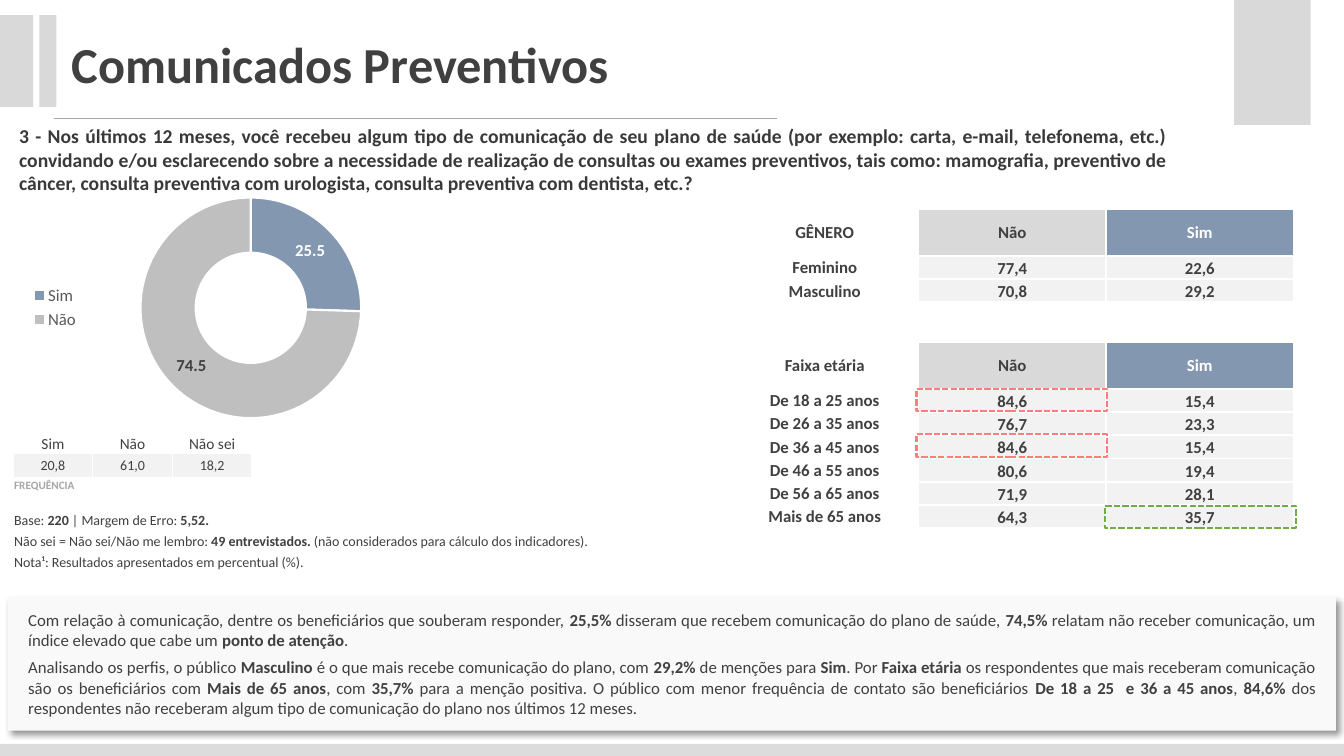
from lxml.etree import SubElement
from pptx import Presentation
from pptx.chart.data import CategoryChartData
from pptx.dml.color import RGBColor
from pptx.enum.chart import XL_CHART_TYPE as ChartType, XL_LEGEND_POSITION as LegendPosition
from pptx.enum.dml import MSO_LINE as Dash
from pptx.enum.shapes import MSO_CONNECTOR as Connector, MSO_SHAPE as Shape
from pptx.enum.text import MSO_ANCHOR as Anchor, MSO_AUTO_SIZE as AutoSize, PP_ALIGN as Align
from pptx.oxml import parse_xml
from pptx.oxml.ns import nsdecls, qn
from pptx.util import Inches, Pt

FONT = "Calibri"
COLORS = {
    "text": "404040", "question": "3B3838", "muted": "A6A6A6", "legend": "595959",
    "white": "FFFFFF", "band": "D9D9D9", "footer": "DCDCDC", "cell": "F2F2F2",
    "panel": "F9F9F9", "yes": "8497B0", "no": "BFBFBF", "low": "FF7C80", "high": "70AD47",
}
QUESTION = (
    "3 - Nos últimos 12 meses, você recebeu algum tipo de comunicação de seu plano de saúde "
    "(por exemplo: carta, e-mail, telefonema, etc.) convidando e/ou esclarecendo sobre a "
    "necessidade de realização de consultas ou exames preventivos, tais como: mamografia, "
    "preventivo de câncer, consulta preventiva com urologista, consulta preventiva com "
    "dentista, etc.?")
GENDER = [("Feminino", "77,4", "22,6"), ("Masculino", "70,8", "29,2")]
AGES = [
    ("De 18 a 25 anos", "84,6", "15,4"), ("De 26 a 35 anos", "76,7", "23,3"),
    ("De 36 a 45 anos", "84,6", "15,4"), ("De 46 a 55 anos", "80,6", "19,4"),
    ("De 56 a 65 anos", "71,9", "28,1"), ("Mais de 65 anos", "64,3", "35,7"),
]
# Text between ** marks is bold
NOTES = [
    "Base: **220** | Margem de Erro: **5,52.**",
    "Não sei = Não sei/Não me lembro: **49 entrevistados.** "
    "(não considerados para cálculo dos indicadores).",
    "Nota¹: Resultados apresentados em percentual (%).",
]
ANALYSIS = [
    "Com relação à comunicação, dentre os beneficiários que souberam responder, **25,5%** "
    "disseram que recebem comunicação do plano de saúde, **74,5%** relatam não receber "
    "comunicação, um índice elevado que cabe um **ponto de atenção**.",
    "Analisando os perfis, o público** Masculino** é o que mais recebe comunicação do plano, "
    "com **29,2% **de menções para **Sim**. Por **Faixa etária **os respondentes que mais "
    "receberam comunicação são os beneficiários com **Mais de 65 anos**, com **35,7% **para a "
    "menção positiva. O público com menor frequência de contato são beneficiários "
    "**De 18 a 25  e 36 a 45 anos**, **84,6% **dos respondentes não receberam algum tipo de "
    "comunicação do plano nos últimos 12 meses.",
]


def rgb(name):
    return RGBColor.from_string(COLORS[name])


def place(left, top, width, height):
    return [Inches(value) for value in (left, top, width, height)]


def style_font(font, size, color="text", bold=False):
    font.name, font.size, font.bold = FONT, Pt(size), bold
    font.color.rgb = rgb(color)


def write(para, text, size, color="text", bold=False, align=Align.LEFT):
    para.alignment = align
    style_font(para.font, size, color, bold)
    for index, part in enumerate(text.split("**")):
        if part:
            span = para.add_run()
            span.text = part
            if index % 2:
                span.font.bold = True


def set_margins(target, horizontal, top, bottom):
    target.margin_left = target.margin_right = Inches(horizontal)
    target.margin_top, target.margin_bottom = Inches(top), Inches(bottom)


def add_block(page, spot, fill=None, outline=None):
    block = page.shapes.add_shape(Shape.RECTANGLE, *place(*spot))
    block.shadow.inherit = False
    if fill:
        block.fill.solid()
        block.fill.fore_color.rgb = rgb(fill)
    else:
        block.fill.background()
    if outline:
        block.line.color.rgb = rgb(outline)
        block.line.width = Pt(1.5)
        block.line.dash_style = Dash.SQUARE_DOT
    else:
        block.line.fill.background()
    return block


def add_grid(page, left, top, widths, heights):
    spot = place(left, top, sum(widths), sum(heights))
    table = page.shapes.add_table(len(heights), len(widths), *spot).table
    table.first_row = table.horz_banding = False
    for column, width in zip(table.columns, widths):
        column.width = Inches(width)
    for row, height in zip(table.rows, heights):
        row.height = Inches(height)
    return table


def style_cell(cell, fill=None, border=0, anchor=Anchor.MIDDLE):
    set_margins(cell, 0.01, 0.01, 0)
    cell.vertical_anchor = anchor
    if fill:
        cell.fill.solid()
        cell.fill.fore_color.rgb = rgb(fill)
    else:
        cell.fill.background()
    paint = (f'<a:solidFill><a:srgbClr val="{COLORS["white"]}"/></a:solidFill>'
             if border else "<a:noFill/>")
    for index, side in enumerate("LRTB"):
        edge = f'<a:ln{side} {nsdecls("a")} w="{Pt(border)}">{paint}</a:ln{side}>'
        cell._tc.get_or_add_tcPr().insert(index, parse_xml(edge))


def add_profile_table(page):
    heights = [0.47, *[0.23] * 2, 0.39, 0.47, *[0.23] * 6]
    table = add_grid(page, 7.25, 2.07, [1.86] * 3, heights)
    rows = [("GÊNERO", "Não", "Sim"), *GENDER, None, ("Faixa etária", "Não", "Sim"), *AGES]
    for row, values in enumerate(rows):
        if values is None:
            table.cell(row, 0).merge(table.cell(row, 2))
        header = bool(values) and values[1] == "Não"
        fills = (None, "band", "yes") if header else (None, "cell", "cell")
        for col in range(3):
            cell = table.cell(row, col)
            anchor = Anchor.MIDDLE if header or col == 0 else Anchor.BOTTOM
            style_cell(cell, fills[col] if values else None, 1.5, anchor)
            if values:
                color = "white" if header and col == 2 else "text"
                write(cell.text_frame.paragraphs[0], values[col], 12, color, True, Align.CENTER)


def add_frequency_table(page):
    table = add_grid(page, 0.13, 4.3, [0.79] * 3, [0.2, 0.24, 0.24])
    rows = [(("Sim", "Não", "Não sei"), 11, None, Anchor.BOTTOM),
            (("20,8", "61,0", "18,2"), 10, "cell", Anchor.MIDDLE)]
    for row, (values, size, fill, anchor) in enumerate(rows):
        for col, value in enumerate(values):
            cell = table.cell(row, col)
            style_cell(cell, fill, 1, anchor)
            write(cell.text_frame.paragraphs[0], value, size, align=Align.CENTER)
    caption = table.cell(2, 0)
    caption.merge(table.cell(2, 2))
    style_cell(caption, None, 1, Anchor.TOP)
    write(caption.text_frame.paragraphs[0], "FREQUÊNCIA", 8, "muted", True)


def add_notes(page):
    table = add_grid(page, 0.13, 5.07, [7.09], [0.21] * 3)
    for row, note in enumerate(NOTES):
        cell = table.cell(row, 0)
        style_cell(cell, anchor=Anchor.TOP)
        write(cell.text_frame.paragraphs[0], note, 10)


def add_doughnut(page):
    data = CategoryChartData(number_format="0.0")
    data.categories = ["Sim", "Não"]
    data.add_series("Series 1", (25.5, 74.5))
    chart = page.shapes.add_chart(ChartType.DOUGHNUT, *place(0.2, 1.81, 3.98, 2.49), data).chart
    style_font(chart.font, 10)
    chart.has_title = False
    chart.has_legend = True
    chart.legend.position = LegendPosition.LEFT
    chart.legend.include_in_layout = False
    style_font(chart.legend.font, 12, "legend")
    plot = chart.plots[0]
    plot.vary_by_categories = True
    series = plot.series[0]
    for index, color in enumerate(("yes", "no")):
        look = series.points[index].format
        look.fill.solid()
        look.fill.fore_color.rgb = rgb(color)
        look.line.color.rgb = rgb("white")
        look.line.width = Pt(1.5)
    labels = series.data_labels
    labels.show_value = True
    labels.number_format, labels.number_format_is_linked = "0.0", False
    style_font(labels.font, 12, "white", True)
    style_font(series.points[1].data_label.font, 12, "text", True)
    # Fixed place of the ring inside the chart
    area = chart._chartSpace.chart.plotArea
    for old in area.findall(qn("c:layout")):
        area.remove(old)
    layout = parse_xml(f'<c:layout {nsdecls("c")}><c:manualLayout/></c:layout>')
    settings = {"layoutTarget": "inner", "xMode": "edge", "yMode": "edge",
                "x": 0.3, "y": 0.06, "w": 0.55, "h": 0.88}
    for key, value in settings.items():
        SubElement(layout[0], qn(f"c:{key}")).set("val", str(value))
    area.insert(0, layout)


def add_analysis(page):
    panel = add_block(page, (0.08, 5.92, 13.17, 1.33), "panel")
    effects = panel._element.spPr.find(qn("a:effectLst"))
    effects.append(parse_xml(
        f'<a:outerShdw {nsdecls("a")} blurRad="{Pt(4)}" dist="{Pt(3)}" dir="2700000" '
        'algn="tl" rotWithShape="0"><a:srgbClr val="000000"><a:alpha val="40000"/>'
        '</a:srgbClr></a:outerShdw>'))
    frame = panel.text_frame
    frame.word_wrap, frame.vertical_anchor = True, Anchor.MIDDLE
    set_margins(frame, 0.2, 0.04, 0.04)
    for index, text in enumerate(ANALYSIS):
        para = frame.add_paragraph() if index else frame.paragraphs[0]
        write(para, text, 12, align=Align.JUSTIFY)
        if index:
            para.space_before = Pt(5)


def add_heading(page):
    rule = page.shapes.add_connector(Connector.STRAIGHT, *place(0.54, 1.17, 7.71, 1.17))
    rule.line.color.rgb, rule.line.width = rgb("muted"), Pt(0.5)
    SubElement(rule._element.spPr, qn("a:effectLst"))
    title = page.shapes.title
    title.left, title.top, title.width, title.height = place(0.61, 0.27, 5.81, 0.71)
    title.text_frame.auto_size = AutoSize.NONE
    write(title.text_frame.paragraphs[0], "Comunicados Preventivos", 36, bold=True)
    box = page.shapes.add_textbox(*place(0.08, 1.17, 11.61, 0.82))
    box.text_frame.word_wrap = True
    set_margins(box.text_frame, 0.11, 0.06, 0.06)
    write(box.text_frame.paragraphs[0], QUESTION, 14, "question", True, Align.JUSTIFY)


def main():
    deck = Presentation()
    deck.slide_width, deck.slide_height = Inches(13.33), Inches(7.5)
    page = deck.slides.add_slide(deck.slide_layouts[5])
    # Decorative bands
    add_block(page, (0, 7.38, 13.33, 0.12), "footer")
    for spot in ((0, 0.15, 0.33, 0.91), (0.39, 0.15, 0.17, 0.91), (12.24, 0, 0.76, 1.24)):
        add_block(page, spot, "band")
    # Heading, results and analysis
    add_heading(page)
    add_profile_table(page)
    add_frequency_table(page)
    add_notes(page)
    add_doughnut(page)
    add_analysis(page)
    # Highlighted extremes
    for left, top, color in ((9.09, 3.86, "low"), (9.09, 4.31, "low"), (10.96, 5.02, "high")):
        add_block(page, (left, top, 1.89, 0.22), outline=color)
    deck.save("out.pptx")


if __name__ == "__main__":
    main()
